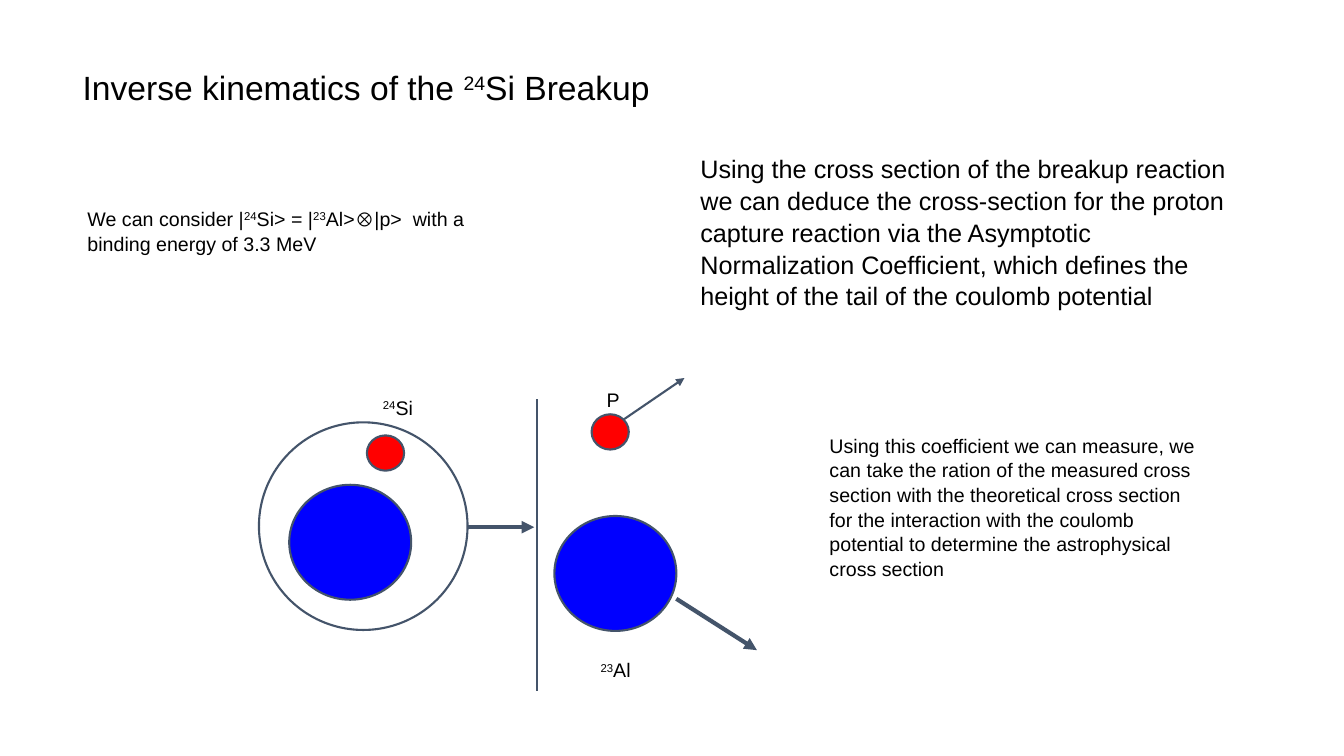
from lxml import etree
from pptx import Presentation
from pptx.dml.color import RGBColor
from pptx.enum.shapes import MSO_CONNECTOR, MSO_SHAPE
from pptx.enum.text import MSO_ANCHOR, MSO_AUTO_SIZE, PP_ALIGN
from pptx.oxml.ns import qn
from pptx.util import Pt

STRAIGHT = MSO_CONNECTOR.STRAIGHT
ELLIPSE = MSO_SHAPE.OVAL
TOP = MSO_ANCHOR.TOP
NO_AUTOSIZE = MSO_AUTO_SIZE.NONE
LEFT = PP_ALIGN.LEFT

BLACK = RGBColor(0x00, 0x00, 0x00)
SLATE = RGBColor(0x44, 0x54, 0x6A)
BLUE = RGBColor(0x00, 0x00, 0xFF)
RED = RGBColor(0xFF, 0x00, 0x00)

TITLE_ONLY = 5
CORE_SIZE = (87.1, 82.1)
PROTON_SIZE = (26.6, 25.2)


class ReactionSlide:
    """Draws the elements of a reaction diagram in one style on one slide."""

    font_name = "Arial"
    inset = Pt(7.2)
    thin = 1.5
    thick = 3

    def __init__(self, slide):
        """Keep the slide to draw on."""
        self.slide = slide

    def fill_text(self, shape, text, size, spacing):
        """Fill a shape with text in which ^ marks switch superscript on and off."""
        frame = shape.text_frame
        frame_format = {
            "word_wrap": True, "auto_size": NO_AUTOSIZE, "vertical_anchor": TOP,
            "margin_left": self.inset, "margin_right": self.inset,
            "margin_top": self.inset, "margin_bottom": self.inset,
        }
        for name, value in frame_format.items():
            setattr(frame, name, value)
        paragraph = frame.paragraphs[0]
        paragraph_format = {
            "alignment": LEFT, "line_spacing": spacing,
            "space_before": Pt(0), "space_after": Pt(0),
        }
        for name, value in paragraph_format.items():
            setattr(paragraph, name, value)
        for index, part in enumerate(text.split("^")):
            if not part:
                continue
            run = paragraph.add_run()
            run.text = part
            font_format = {"name": self.font_name, "size": Pt(size), "bold": False}
            for name, value in font_format.items():
                setattr(run.font, name, value)
            run.font.color.rgb = BLACK
            if index % 2:
                run._r.get_or_add_rPr().set("baseline", "30000")

    def title(self, text, left, top, width, height, size):
        """Place and fill the title placeholder."""
        shape = self.slide.shapes.title
        position = {"left": left, "top": top, "width": width, "height": height}
        for name, value in position.items():
            setattr(shape, name, Pt(value))
        self.fill_text(shape, text, size, 1.0)

    def text(self, text, left, top, width, height, size=14, spacing=1.0):
        """Add a text box."""
        shape = self.slide.shapes.add_textbox(*map(Pt, (left, top, width, height)))
        self.fill_text(shape, text, size, spacing)

    def particle(self, left, top, size, color=None):
        """Add an outlined ellipse, hollow when no colour is given."""
        shape = self.slide.shapes.add_shape(ELLIPSE, *map(Pt, (left, top, *size)))
        shape.shadow.inherit = False
        if color is None:
            shape.fill.background()
        else:
            shape.fill.solid()
            shape.fill.fore_color.rgb = color
        shape.line.color.rgb = SLATE
        shape.line.width = Pt(self.thin)

    def line(self, start, end, width, arrow=True):
        """Add a straight line, with an arrowhead at its end if wanted."""
        connector = self.slide.shapes.add_connector(STRAIGHT, *map(Pt, (*start, *end)))
        connector.line.color.rgb = SLATE
        connector.line.width = Pt(width)
        properties = connector._element.spPr
        if arrow:
            etree.SubElement(properties.find(qn("a:ln")), qn("a:tailEnd"), type="triangle")
        etree.SubElement(properties, qn("a:effectLst"))


def main():
    """Build and save the slide."""
    presentation = Presentation()
    presentation.slide_width = Pt(960)
    presentation.slide_height = Pt(540)
    layout = presentation.slide_layouts[TITLE_ONLY]
    drawing = ReactionSlide(presentation.slides.add_slide(layout))

    drawing.title("Inverse kinematics of the ^24^Si Breakup", 51.8, 40.3, 424, 37.4, 24)
    drawing.text(
        "We can consider |^24^Si> = |^23^Al>⊗|p>  with a binding energy of 3.3 MeV",
        55.4, 139.7, 326.2, 54.7, spacing=1.05)

    drawing.particle(206.6, 346.3, CORE_SIZE, BLUE)
    drawing.particle(262.1, 311, PROTON_SIZE, RED)
    drawing.line((383.8, 285.1), (383.8, 493.9), drawing.thin, arrow=False)
    drawing.line((334.1, 376.6), (381.6, 376.6), drawing.thick)
    drawing.particle(396, 368.6, CORE_SIZE, BLUE)
    drawing.line((483.1, 427.7), (540.7, 464.4), drawing.thick)
    drawing.particle(422.6, 295.9, PROTON_SIZE, RED)
    drawing.line((445.7, 299.5), (488.9, 270), drawing.thin)
    drawing.particle(185, 301.7, (149, 148.3))

    drawing.text("^24^Si", 266.4, 275.8, 37.4, 25.2)
    drawing.text("P", 426.2, 270, 26.6, 15.1)
    drawing.text("^23^Al", 421.9, 463, 43.2, 25.2)

    drawing.text(
        "Using the cross section of the breakup reaction we can deduce the "
        "cross-section for the proton capture reaction via the Asymptotic "
        "Normalization Coefficient, which defines the height of the tail of "
        "the coulomb potential",
        493.2, 101.5, 393.1, 95.8, size=18, spacing=1.05)
    drawing.text(
        "Using this coefficient we can measure, we can take the ration of the "
        "measured cross section with the theoretical cross section for the "
        "interaction with the coulomb potential to determine the "
        "astrophysical cross section",
        585.4, 301.7, 280.1, 110.9, spacing=1.05)

    presentation.save("out.pptx")


if __name__ == "__main__":
    main()
